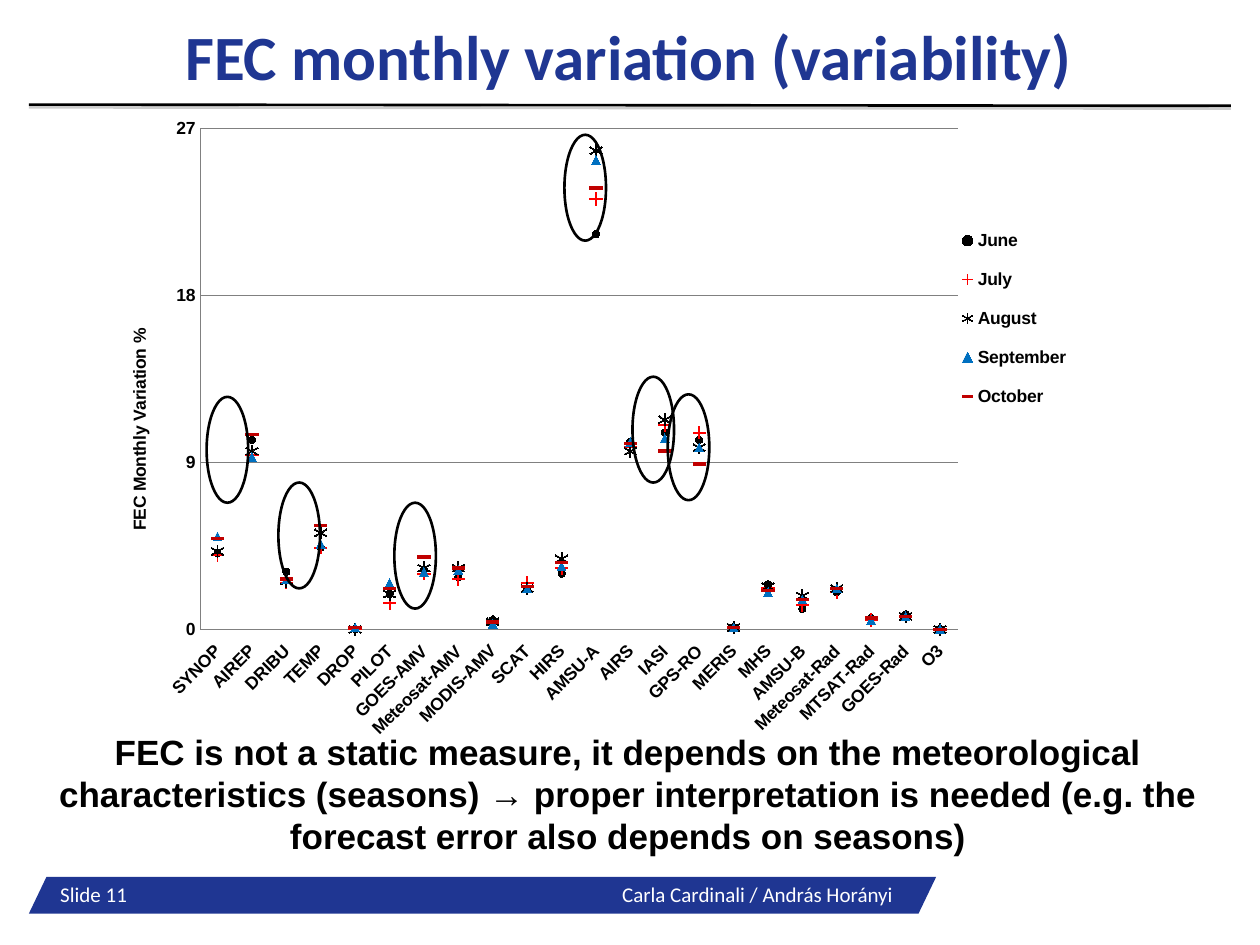
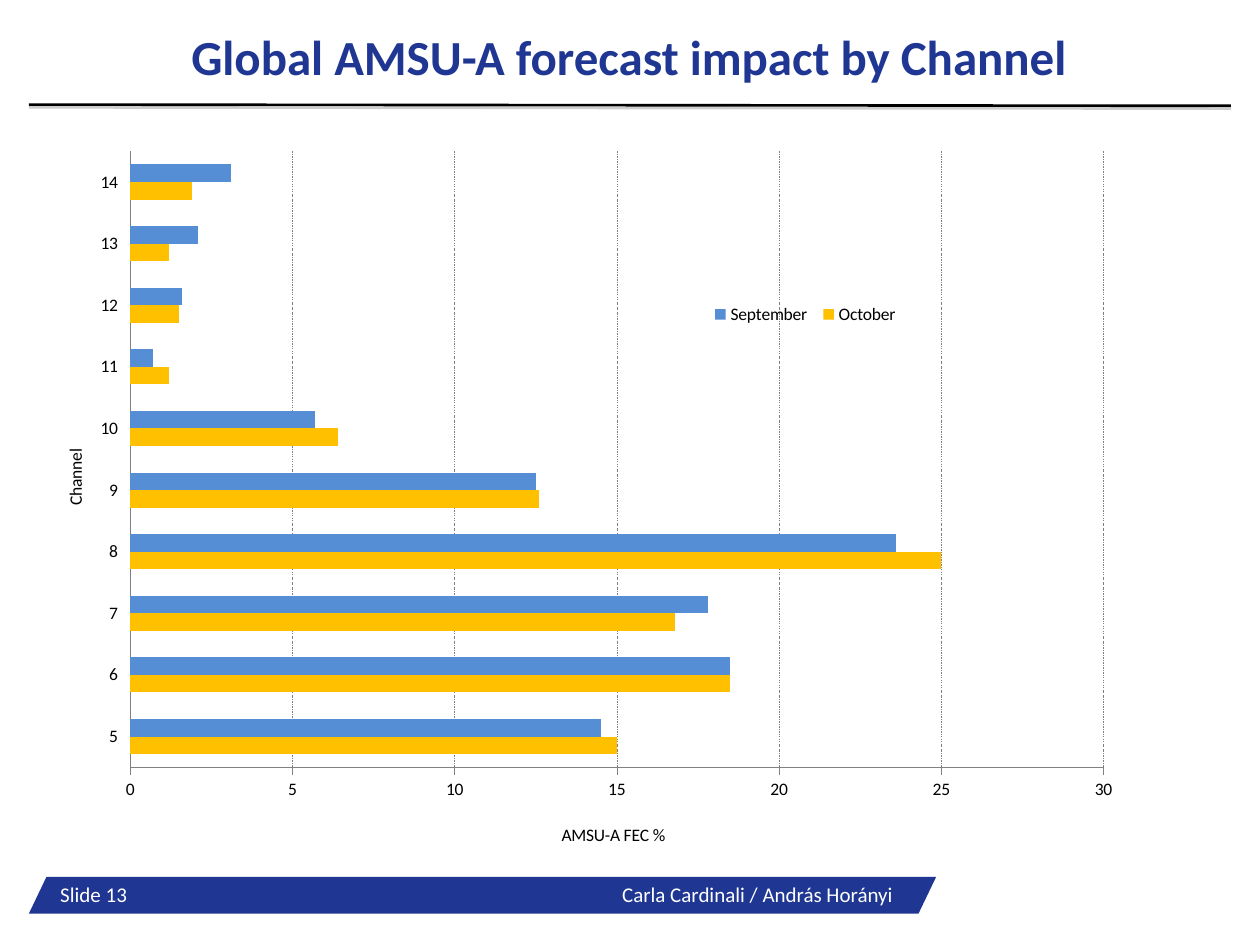
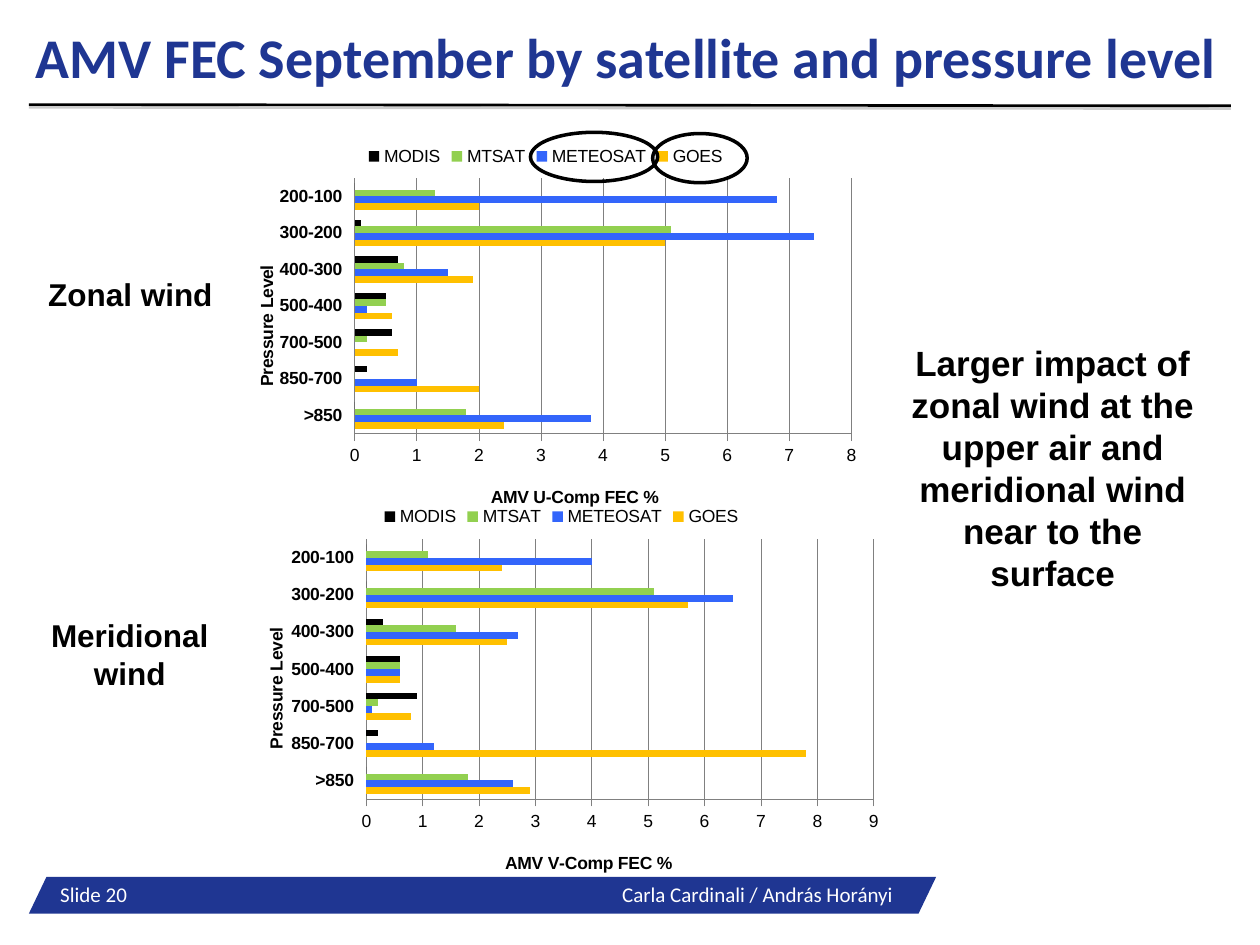
from lxml import etree
from pptx import Presentation
from pptx.chart.data import CategoryChartData
from pptx.dml.color import RGBColor
from pptx.enum.chart import (XL_CHART_TYPE, XL_LEGEND_POSITION, XL_MARKER_STYLE,
                             XL_TICK_LABEL_POSITION, XL_TICK_MARK)
from pptx.enum.dml import MSO_LINE
from pptx.enum.shapes import MSO_CONNECTOR, MSO_SHAPE
from pptx.enum.text import MSO_ANCHOR, PP_ALIGN
from pptx.oxml import parse_xml
from pptx.oxml.ns import nsdecls, qn
from pptx.util import Inches, Pt

# Colours and fonts
NAVY = RGBColor(0x1F, 0x36, 0x92)
BLACK = RGBColor(0, 0, 0)
WHITE = RGBColor(0xFF, 0xFF, 0xFF)
GREY = RGBColor(0x80, 0x80, 0x80)
RED = RGBColor(0xFF, 0, 0)
DARK_RED = RGBColor(0xC0, 0, 0)
BLUE = RGBColor(0, 0x70, 0xC0)
SKY = RGBColor(0x55, 0x8E, 0xD5)
ROYAL = RGBColor(0x33, 0x65, 0xFB)
GREEN = RGBColor(0x92, 0xD0, 0x50)
AMBER = RGBColor(0xFF, 0xC0, 0)
SANS, HEAD = "Arial", "Calibri"

AUTHORS = "Carla Cardinali / András Horányi"

# Slide 11: monthly variation per observation type
OBS_TYPES = ["SYNOP", "AIREP", "DRIBU", "TEMP", "DROP", "PILOT", "GOES-AMV",
             "Meteosat-AMV", "MODIS-AMV", "SCAT", "HIRS", "AMSU-A", "AIRS", "IASI",
             "GPS-RO", "MERIS", "MHS", "AMSU-B", "Meteosat-Rad", "MTSAT-Rad",
             "GOES-Rad", "O3"]
MONTHS = [
    ("June", [4.1, 10.2, 3.1, 4.4, 0, 1.9, 3.2, 2.8, 0.5, 2.2, 3, 21.3, 10.1, 10.6,
              10.2, 0.1, 2.4, 1.1, 2, 0.6, 0.8, 0]),
    ("July", [4, 9.4, 2.5, 4.4, 0, 1.4, 3, 2.7, 0.4, 2.5, 3.3, 23.2, 9.8, 11,
              10.6, 0.1, 2.2, 1.3, 2, 0.5, 0.7, 0]),
    ("August", [4.2, 9.6, 2.6, 5.2, 0, 1.9, 3.3, 3.3, 0.4, 2.2, 3.8, 25.8, 9.6, 11.3,
                9.8, 0.1, 2.3, 1.8, 2.2, -0.8, 0.7, 0]),
    ("September", [5, 9.3, 2.7, 4.6, 0.1, 2.5, 3.1, 3.2, 0.3, 2.2, 3.4, 25.3, 10.1,
                   10.3, 9.8, 0.1, 2, 1.6, 2.2, 0.5, 0.7, 0]),
    ("October", [4.9, 10.5, 2.7, 5.6, 0.1, 2.2, 3.9, 3.3, 0.4, 2.3, 3.6, 23.8, 10,
                 9.6, 8.9, 0.1, 2.1, 1.6, 2.2, 0.6, 0.7, 0]),
]
MARKERS = [(XL_MARKER_STYLE.CIRCLE, 4, BLACK), (XL_MARKER_STYLE.PLUS, 7, RED),
           (XL_MARKER_STYLE.STAR, 7, BLACK), (XL_MARKER_STYLE.TRIANGLE, 5, BLUE),
           (XL_MARKER_STYLE.DASH, 7, DARK_RED)]
MONTH_RINGS = [(4.48, 1.07), (5.3, 3.13), (2.21, 3.83), (1.64, 3.15), (3.13, 3.99),
               (5.02, 2.99)]
RING_SIZE = (0.33, 0.84)
SEASON_NOTE = ("FEC is not a static measure, it depends on the meteorological "
               "characteristics (seasons) → proper interpretation is needed "
               "(e.g. the forecast error also depends on seasons)")

# Slide 13: impact per channel
CHANNELS = [str(n) for n in range(5, 15)]
CHANNEL_SERIES = [
    ("October", [15, 18.5, 16.8, 25, 12.6, 6.4, 1.2, 1.5, 1.2, 1.9]),
    ("September", [14.5, 18.5, 17.8, 23.6, 12.5, 5.7, 0.7, 1.6, 2.1, 3.1]),
]

# Slide 20: wind components per pressure level
LEVELS = [">850", "850-700", "700-500", "500-400", "400-300", "300-200", "200-100"]
WIND_CHARTS = [
    ((1.77, 1.05, 5.12, 3.12), "AMV U-Comp FEC %", 8, [
        ("GOES", [2.4, 2, 0.7, 0.6, 1.9, 5, 2]),
        ("METEOSAT", [3.8, 1, 0, 0.2, 1.5, 7.4, 6.8]),
        ("MTSAT", [1.8, 0, 0.2, 0.5, 0.8, 5.1, 1.3]),
        ("MODIS", [0, 0.2, 0.6, 0.5, 0.7, 0.1, 0])]),
    ((1.84, 3.91, 5.23, 3.17), "AMV V-Comp FEC %", 9, [
        ("GOES", [2.9, 7.8, 0.8, 0.6, 2.5, 5.7, 2.4]),
        ("METEOSAT", [2.6, 1.2, 0.1, 0.6, 2.7, 6.5, 4]),
        ("MTSAT", [1.8, 0, 0.2, 0.6, 1.6, 5.1, 1.1]),
        ("MODIS", [0, 0.2, 0.9, 0.6, 0.3, 0, 0])]),
]
WIND_NOTES = [("Zonal wind", (0.23, 2.13, 1.61, 0.4), 18),
              ("Meridional wind", (0.07, 4.84, 1.92, 0.71), 18),
              ("Larger impact of zonal wind at the upper air and meridional wind "
               "near to the surface", (7.03, 2.66, 2.65, 2.12), 20)]
LEGEND_RINGS = [(4.21, 1.05, 1.01, 0.39), (5.18, 1.06, 0.75, 0.39)]


def inches(box):
    return [Inches(v) for v in box]


def style_font(font, size, name=SANS, color=BLACK, bold=False):
    font.size, font.name, font.bold = Pt(size), name, bold
    font.color.rgb = color


def add_text(s, box, text, size, name=SANS, color=BLACK, bold=True,
             align=PP_ALIGN.CENTER):
    tf = s.shapes.add_textbox(*inches(box)).text_frame
    tf.word_wrap = True
    p = tf.paragraphs[0]
    p.text, p.alignment = text, align
    for r in p.runs:
        style_font(r.font, size, name, color, bold)
    return tf


def add_ring(s, box, width):
    sp = s.shapes.add_shape(MSO_SHAPE.OVAL, *inches(box))
    sp.shadow.inherit = False
    sp.fill.background()
    sp.line.color.rgb, sp.line.width = BLACK, Pt(width)


def add_frame(prs, number, title, size, title_box=(0.38, 0.12, 9.22, 0.71)):
    """Add a slide with footer band, rule and title."""
    s = prs.slides.add_slide(prs.slide_layouts[6])
    band = s.shapes.add_shape(MSO_SHAPE.PARALLELOGRAM, *inches((0.23, 6.96, 7.2, 0.29)))
    band.adjustments[0] = 0.48
    band.shadow.inherit = False
    band.fill.solid()
    band.fill.fore_color.rgb = NAVY
    band.line.fill.background()

    tf = add_text(s, (0.38, 6.95, 7.77, 0.3), f"Slide {number}\t{AUTHORS}", 12, HEAD,
                  WHITE, False, PP_ALIGN.LEFT)
    tabs = etree.SubElement(tf.paragraphs[0]._p.get_or_add_pPr(), qn("a:tabLst"))
    etree.SubElement(tabs, qn("a:tab"), pos=str(Inches(4.46)), algn="l")

    rule = s.shapes.add_connector(MSO_CONNECTOR.STRAIGHT,
                                  *inches((0.23, 0.83, 9.77, 0.84)))
    rule.line.color.rgb, rule.line.width = BLACK, Pt(1.5)
    rule._element.spPr.append(parse_xml(
        f'<a:effectLst {nsdecls("a")}><a:outerShdw dist="{Pt(1.6)}" dir="5400000">'
        f'<a:srgbClr val="{GREY}"><a:alpha val="38000"/></a:srgbClr>'
        '</a:outerShdw></a:effectLst>'))

    tf = add_text(s, title_box, title, size, HEAD, NAVY)
    tf.margin_left = tf.margin_right = tf.margin_top = tf.margin_bottom = 0
    tf.vertical_anchor = MSO_ANCHOR.MIDDLE
    tf.paragraphs[0].line_spacing = 0.9
    return s


def set_layout(element, index, values, inner=False):
    """Place a chart part by shares of the chart: x, y and optionally w, h."""
    for old in element.findall(qn("c:layout")):
        element.remove(old)
    layout = etree.Element(qn("c:layout"))
    manual = etree.SubElement(layout, qn("c:manualLayout"))
    if inner:
        etree.SubElement(manual, qn("c:layoutTarget"), val="inner")
    for key in ("xMode", "yMode"):
        etree.SubElement(manual, qn("c:" + key), val="edge")
    for key, value in zip("xywh", values):
        etree.SubElement(manual, qn("c:" + key), val=str(value))
    element.insert(index, layout)


def add_chart(s, kind, box, cats, series, plot_area, maximum, major, grid,
              legend_at, font=SANS, bold=False):
    data = CategoryChartData(number_format="General")
    data.categories = cats
    for name, values in series:
        data.add_series(name, values)
    chart = s.shapes.add_chart(kind, *inches(box), data).chart
    chart.has_title = False
    style_font(chart.font, 10, font, bold=bold)
    chart.has_legend = True
    chart.legend.position = legend_at
    chart.legend.include_in_layout = False
    set_layout(chart._chartSpace.chart.plotArea, 0, plot_area, inner=True)

    value, category = chart.value_axis, chart.category_axis
    value.minimum_scale, value.maximum_scale, value.major_unit = 0, maximum, major
    value.has_major_gridlines = True
    for line in (value.format.line, category.format.line, value.major_gridlines.format.line):
        line.color.rgb, line.width = GREY, Pt(0.25)
    value.major_gridlines.format.line.dash_style = grid
    category.major_tick_mark = XL_TICK_MARK.NONE
    category.tick_label_position = XL_TICK_LABEL_POSITION.LOW
    return chart


def add_axis_title(axis, text, at, font=SANS, bold=True):
    title = axis.axis_title
    title.text_frame.text = text
    style_font(title.text_frame.paragraphs[0].runs[0].font, 10, font, bold=bold)
    set_layout(title._element, 1, at)


def color_bars(chart, colors):
    plot = chart.plots[0]
    plot.gap_width, plot.overlap, plot.vary_by_categories = 150, 0, False
    for ser, color in zip(plot.series, colors):
        ser.format.fill.solid()
        ser.format.fill.fore_color.rgb = color


def monthly_slide(prs):
    s = add_frame(prs, 11, "FEC monthly variation (variability)", 36)
    chart = add_chart(s, XL_CHART_TYPE.LINE_MARKERS, (0.75, 0.84, 8, 5.13), OBS_TYPES,
                      MONTHS, (0.105, 0.035, 0.751, 0.775), 27, 9, MSO_LINE.ROUND_DOT,
                      XL_LEGEND_POSITION.RIGHT, bold=True)
    set_layout(chart.legend._element, 1, (0.855, 0.164, 0.115, 0.33))
    add_axis_title(chart.value_axis, "FEC Monthly Variation %", (0.03, 0.34))
    chart.value_axis.major_tick_mark = XL_TICK_MARK.NONE
    labels = chart.category_axis.tick_labels
    style_font(labels.font, 10, bold=True)
    chart.category_axis._element.find(qn("c:txPr")).find(qn("a:bodyPr")).set(
        "rot", "-2700000")
    chart.plots[0].vary_by_categories = False
    for ser, (style, size, color) in zip(chart.plots[0].series, MARKERS):
        ser.smooth = False
        ser.format.line.fill.background()
        ser.marker.style, ser.marker.size = style, size
        ser.marker.format.fill.solid()
        ser.marker.format.fill.fore_color.rgb = color
        ser.marker.format.line.color.rgb = color
    for at in MONTH_RINGS:
        add_ring(s, at + RING_SIZE, 1.5)
    add_text(s, (0.11, 5.75, 9.75, 1.11), SEASON_NOTE, 20)


def channel_slide(prs):
    s = add_frame(prs, 13, "Global AMSU-A forecast impact by Channel", 28)
    chart = add_chart(s, XL_CHART_TYPE.BAR_CLUSTERED, (0.24, 1.08, 9.68, 5.78), CHANNELS,
                      CHANNEL_SERIES, (0.082, 0.021, 0.798, 0.846), 30, 5,
                      MSO_LINE.DASH_DOT, XL_LEGEND_POSITION.RIGHT, HEAD)
    set_layout(chart.legend._element, 1, (0.553, 0.225, 0.165, 0.04))
    add_axis_title(chart.category_axis, "Channel", (0.025, 0.425), HEAD, False)
    add_axis_title(chart.value_axis, "AMSU-A FEC %", (0.433, 0.94), HEAD, False)
    color_bars(chart, [AMBER, SKY])


def wind_slide(prs):
    s = add_frame(prs, 20, "AMV FEC September by satellite and pressure level", 32,
                  (0.23, 0.12, 9.48, 0.71))
    for box, title, maximum, series in WIND_CHARTS:
        chart = add_chart(s, XL_CHART_TYPE.BAR_CLUSTERED, box, LEVELS, series,
                          (0.204, 0.117, 0.77, 0.65), maximum, 1, MSO_LINE.ROUND_DOT,
                          XL_LEGEND_POSITION.TOP)
        add_axis_title(chart.category_axis, "Pressure Level", (0.045, 0.33))
        add_axis_title(chart.value_axis, title, (0.41, 0.89))
        style_font(chart.category_axis.tick_labels.font, 10, bold=True)
        color_bars(chart, [AMBER, ROYAL, GREEN, BLACK])
    for text, box, size in WIND_NOTES:
        add_text(s, box, text, size)
    for box in LEGEND_RINGS:
        add_ring(s, box, 2)


def main():
    prs = Presentation()
    prs.slide_width, prs.slide_height = Inches(10), Inches(7.5)
    monthly_slide(prs)
    channel_slide(prs)
    wind_slide(prs)
    prs.save("out.pptx")


if __name__ == "__main__":
    main()
